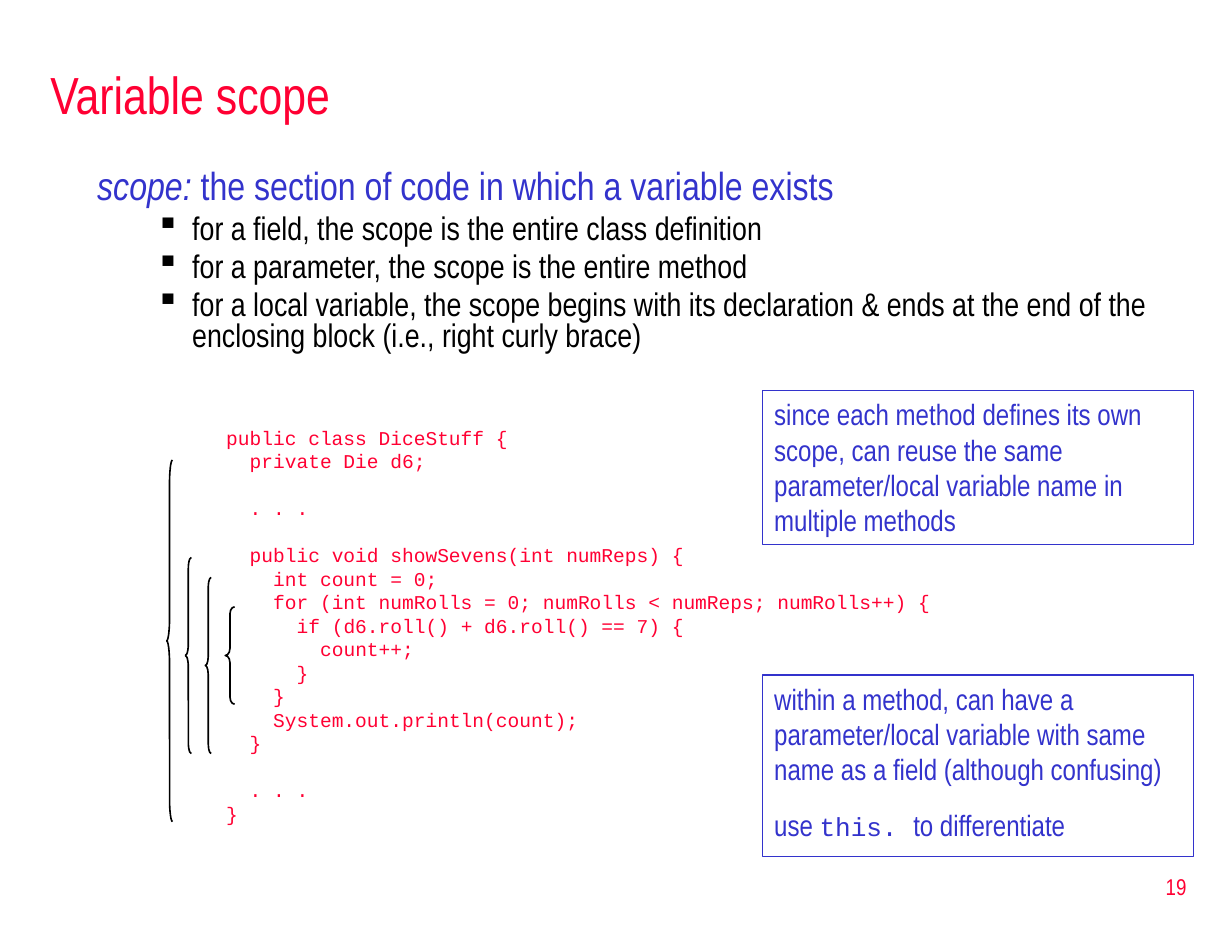
from lxml import etree
from pptx import Presentation
from pptx.dml.color import RGBColor
from pptx.enum.shapes import MSO_SHAPE
from pptx.enum.text import MSO_ANCHOR, PP_ALIGN
from pptx.oxml.ns import qn
from pptx.util import Inches, Pt

RECTANGLE = MSO_SHAPE.RECTANGLE
LEFT_BRACE = MSO_SHAPE.LEFT_BRACE
TOP, MIDDLE = MSO_ANCHOR.TOP, MSO_ANCHOR.MIDDLE
LEFT, RIGHT = PP_ALIGN.LEFT, PP_ALIGN.RIGHT

COLORS = {"red": "FF0033", "blue": "3333CC", "black": "000000"}
SANS, MONO = "Arial Narrow", "Courier New"
CODE_SIZE, CODE_PITCH, CODE_INDENT = 12, 14.4, 0.2

BULLETS = [
    "for a field, the scope is the entire class definition",
    "for a parameter, the scope is the entire method",
    "for a local variable, the scope begins with its declaration & ends at "
    "the end of the enclosing block (i.e., right curly brace)",
]

CODE = """public class DiceStuff {
  private Die d6;

  . . .

  public void showSevens(int numReps) {
    int count = 0;
    for (int numRolls = 0; numRolls < numReps; numRolls++) {
      if (d6.roll() + d6.roll() == 7) {
        count++;
      }
    }
    System.out.println(count);
  }

  . . .
}"""

SCOPE_BRACES = [
    (1.92, 5.17, 0.08, 0.83, 0.75),
    (1.75, 4.92, 0.05, 1.5, 1.57),
    (1.58, 4.75, 0.05, 1.67, 1.9),
    (1.42, 3.92, 0.05, 3.08, 3.81),
]


def add_text(paragraph, text, font=SANS, size=18, color="blue", italic=False):
    run = paragraph.add_run()
    run.text = text
    run.font.name = font
    run.font.size = Pt(size)
    run.font.italic = italic
    run.font.color.rgb = RGBColor.from_string(COLORS[color])


class SlideBuilder:
    def __init__(self, slide):
        self.slide = slide

    def frame(self, shape, anchor=TOP):
        frame = shape.text_frame
        frame.word_wrap = True
        frame.vertical_anchor = anchor
        return frame

    def text_box(self, left, top, width, height, anchor=TOP):
        box = self.slide.shapes.add_textbox(
            Inches(left), Inches(top), Inches(width), Inches(height))
        return self.frame(box, anchor)

    def outline(self, kind, left, top, width, height, color, weight):
        shape = self.slide.shapes.add_shape(
            kind, Inches(left), Inches(top), Inches(width), Inches(height))
        shape.shadow.inherit = False
        shape.fill.background()
        shape.line.color.rgb = RGBColor.from_string(COLORS[color])
        shape.line.width = Pt(weight)
        return shape

    def note(self, top, height):
        note = self.outline(RECTANGLE, 6.5, top, 3.67, height, "blue", 0.75)
        frame = self.frame(note)
        frame.paragraphs[0].alignment = LEFT
        return frame

    def brace(self, left, top, width, height, curve):
        brace = self.outline(LEFT_BRACE, left, top, width, height, "black", 1)
        brace.adjustments[0] = curve

    def indent(self, paragraph, margin, first=0):
        properties = paragraph._p.get_or_add_pPr()
        properties.set("marL", str(Inches(margin)))
        properties.set("indent", str(Inches(first)))
        return properties

    def bullet(self, frame, text):
        paragraph = frame.add_paragraph()
        paragraph.line_spacing = 0.8
        paragraph.space_before = Pt(4)
        properties = self.indent(paragraph, 0.81, -0.31)
        etree.SubElement(properties, qn("a:buChar")).set("char", "▪")
        add_text(paragraph, text, size=20, color="black")

    def code(self, frame, source):
        paragraph, gap = frame.paragraphs[0], 0
        for number, line in enumerate(source.splitlines()):
            statement = line.lstrip()
            if not statement:
                gap += CODE_PITCH
                continue
            if number:
                paragraph = frame.add_paragraph()
            paragraph.line_spacing = Pt(CODE_PITCH)
            paragraph.space_before = Pt(gap)
            depth = (len(line) - len(statement)) // 2
            self.indent(paragraph, depth * CODE_INDENT)
            add_text(paragraph, statement, MONO, CODE_SIZE, "red")
            gap = 0


def main():
    deck = Presentation()
    deck.slide_width, deck.slide_height = Inches(10.5), Inches(8)
    builder = SlideBuilder(deck.slides.add_slide(deck.slide_layouts[6]))

    page_number = builder.text_box(8.02, 7.29, 2.19, 0.53, MIDDLE).paragraphs[0]
    page_number.alignment = RIGHT
    add_text(page_number, "19", size=14, color="red")

    title = builder.text_box(0.33, 0.42, 9.92, 0.75, MIDDLE).paragraphs[0]
    add_text(title, "Variable scope", size=32, color="red")

    body = builder.text_box(0.73, 1.33, 9.35, 1.83)
    definition = body.paragraphs[0]
    definition.space_before = Pt(4.8)
    builder.indent(definition, 0.38, -0.38)
    add_text(definition, "scope:", size=24, italic=True)
    add_text(definition, " the section of code in which a variable exists", size=24)
    for rule in BULLETS:
        builder.bullet(body, rule)

    builder.code(builder.text_box(1.83, 3.58, 6.5, 3.53), CODE)
    for brace in SCOPE_BRACES:
        builder.brace(*brace)

    reuse = builder.note(3.33, 1.31)
    add_text(reuse.paragraphs[0],
             "since each method defines its own scope, can reuse the same "
             "parameter/local variable name in multiple methods")

    shadowing = builder.note(5.75, 1.55)
    add_text(shadowing.paragraphs[0],
             "within a method, can have a parameter/local variable with same "
             "name as a field (although confusing)")
    remedy = shadowing.add_paragraph()
    remedy.alignment = LEFT
    remedy.space_before = Pt(12.5)
    add_text(remedy, "use ")
    add_text(remedy, "this. ", MONO, 16)
    add_text(remedy, "to differentiate")

    deck.save("out.pptx")


if __name__ == "__main__":
    main()
